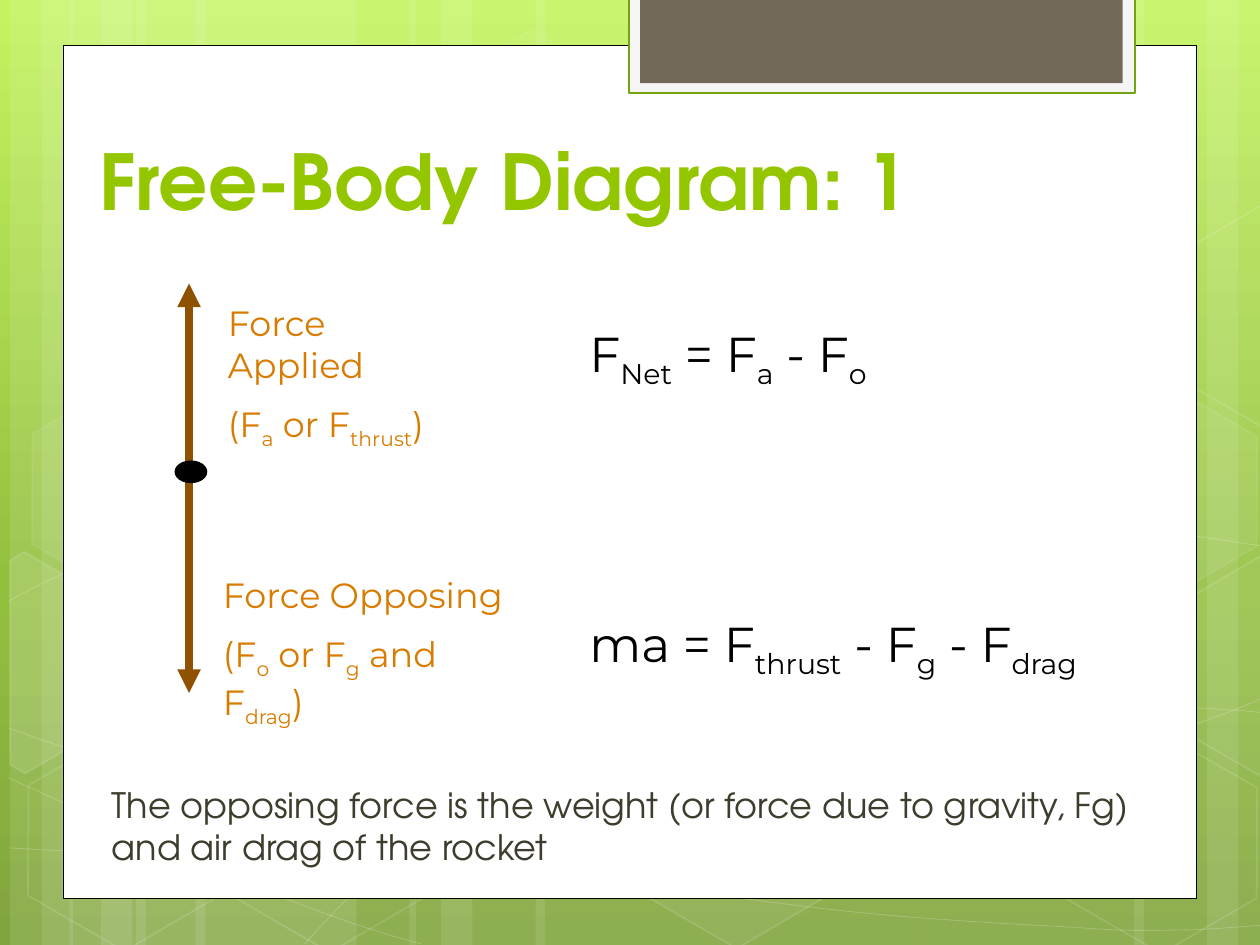
"""Build a slide with the free-body diagram of a rocket."""
from copy import deepcopy
from dataclasses import dataclass
from typing import Optional

from lxml.etree import SubElement
from pptx import Presentation
from pptx.dml.color import RGBColor
from pptx.enum.shapes import MSO_CONNECTOR, MSO_SHAPE
from pptx.enum.text import MSO_ANCHOR, PP_ALIGN
from pptx.oxml.ns import qn
from pptx.util import Cm, Pt

WHITE = RGBColor(0xFF, 0xFF, 0xFF)
BLACK = RGBColor(0x00, 0x00, 0x00)
LIME = RGBColor(0x94, 0xC6, 0x00)
FRAME_GREEN = RGBColor(0x74, 0xA5, 0x10)
TAB_GREY = RGBColor(0xF5, 0xF5, 0xF5)
TAB_BROWN = RGBColor(0x71, 0x68, 0x5A)
ARROW_BROWN = RGBColor(0x8F, 0x52, 0x01)
FORCE_ORANGE = RGBColor(0xD7, 0x7C, 0x01)
OLIVE = RGBColor(0x3E, 0x3D, 0x2D)
SKY = [
    (0, RGBColor(0xC3, 0xF3, 0x5F)),
    (0.62, RGBColor(0x93, 0xBF, 0x3F)),
    (1, RGBColor(0x81, 0xA5, 0x3E)),
]
BODY_FONT = "Montserrat"
HEAD_FONT = "TeX Gyre Adventor"


@dataclass
class Paint:
    fill: Optional[RGBColor] = None
    line: Optional[RGBColor] = None
    width: float = 1
    fill_alpha: int = 100
    line_alpha: int = 100


@dataclass
class Hexagon:
    left: float
    top: float
    fill_alpha: int
    line_alpha: int


@dataclass
class CutHexagon:
    points: list
    fill_alpha: int = 0


@dataclass
class Label:
    left: float
    top: float
    width: float
    height: float
    paragraphs: list
    size: int
    color: RGBColor
    font: str = BODY_FONT


STRIPES = [
    (1.08, 1.75), (0.08, 0.5), (0.33, 0.83), (1.55, 1.75), (0.55, 0.5), (0.8, 0.83),
    (7.33, 1.75), (9.58, 0.5), (9, 0.83), (4.25, 3.08), (3.25, 0.5), (3.5, 0.83),
]
CURVES = [
    [(0.07, 6.73), (0.61, 6.76), (1.15, 6.79), (1.9, 6.78), (2.65, 6.77), (3.58, 6.75),
     (4.58, 6.65), (5.58, 6.55), (7, 6.36), (7.92, 6.17), (8.83, 5.98), (9.77, 5.68),
     (10.07, 5.51)],
    [(0.07, 4.77), (0.36, 4.61), (0.65, 4.46), (1.21, 4.31), (1.78, 4.16), (2.59, 3.94),
     (3.47, 3.87), (4.36, 3.8), (5.44, 3.79), (6.54, 3.87), (7.64, 3.95), (9.47, 4.26),
     (10.07, 4.34)],
    [(0.06, 6.17), (1.27, 6.72), (2.47, 7.27), (3.34, 7.49)],
    [(0.07, 5.78), (0.38, 5.89), (0.7, 6), (1.28, 6.16), (1.86, 6.31), (2.73, 6.56),
     (3.57, 6.73), (4.4, 6.9), (5.45, 7.08), (6.28, 7.18), (7.11, 7.29), (8, 7.33),
     (8.53, 7.36), (9.05, 7.4), (9.19, 7.38), (9.45, 7.38), (9.71, 7.37), (9.89, 7.35),
     (10.07, 7.34)],
    [(2.42, 7.49), (2.6, 7.29), (2.78, 7.09), (3.02, 6.91), (3.26, 6.73), (3.6, 6.53),
     (3.88, 6.39), (4.16, 6.25), (4.33, 6.19), (4.7, 6.09), (5.06, 5.99), (5.73, 5.85),
     (6.08, 5.78), (6.44, 5.71), (6.49, 5.71), (6.8, 5.69), (7.11, 5.66), (7.6, 5.63),
     (7.94, 5.62), (8.29, 5.61), (8.86, 5.62), (9.53, 5.62), (9.71, 5.63), (9.88, 5.64),
     (10.06, 5.66)],
]
HEXAGONS = [
    Hexagon(3.34, 0.36, 4, 8), Hexagon(4.97, 5.89, 6, 12), Hexagon(0.11, 5.91, 0, 12),
    Hexagon(0.14, 3.12, 7, 8), Hexagon(1.74, 5.92, 0, 12), Hexagon(7.53, 4.53, 10, 12),
    Hexagon(8.34, 5.93, 0, 12), Hexagon(8.34, 3.14, 7, 8),
]
CUT_HEXAGONS = [
    CutHexagon([(0.08, 4.45), (0.19, 4.38), (0.96, 4.82), (0.95, 5.7), (0.2, 6.14), (0.08, 6.07)], 10),
    CutHexagon([(9.26, 4.85), (10.01, 4.41), (10.09, 4.46), (10.09, 6.13), (10.02, 6.17), (9.26, 5.73)], 4),
    CutHexagon([(9.26, 2.07), (10.01, 1.63), (10.1, 1.68), (10.09, 3.35), (10.02, 3.39), (9.26, 2.95)]),
]
LABELS = [
    Label(4.58, 2.52, 3.17, 0.57, ["F|Net| = F|a| - F|o"], 28, BLACK),
    Label(1.71, 2.34, 1.79, 1.62, ["Force Applied", "(F|a| or F|thrust|)"], 20, FORCE_ORANGE),
    Label(4.58, 4.82, 4.67, 0.57, ["ma = F|thrust| - F|g| - F|drag"], 28, BLACK),
    Label(1.67, 4.5, 2.5, 1.28, ["Force Opposing", "(F|o| or F|g| and F|drag|)"], 20, FORCE_ORANGE),
    Label(0.79, 6.17, 8.37, 0.77,
          ["The opposing force is the weight (or force due to gravity, Fg) and air drag of the rocket"],
          20, OLIVE, HEAD_FONT),
]


def inches(value: float) -> Cm:
    """Convert inches to a length in centimetres."""
    return Cm(value * 2.54)


def set_color(fill, color: Optional[RGBColor], alpha: int) -> None:
    """Fill with a colour of the given opacity, or with nothing."""
    if color is None or alpha == 0:
        fill.background()
        return
    fill.solid()
    fill.fore_color.rgb = color
    if alpha < 100:
        tint = fill._xPr.find(".//" + qn("a:srgbClr"))
        SubElement(tint, qn("a:alpha"), val=str(alpha * 1000))


def apply_paint(shape, paint: Paint) -> None:
    """Give a shape its fill and line."""
    shape.shadow.inherit = False
    set_color(shape.fill, paint.fill, paint.fill_alpha)
    set_color(shape.line.fill, paint.line, paint.line_alpha)
    if paint.line is not None:
        shape.line.width = Pt(paint.width)


def draw_shape(slide, kind, left: float, top: float, width: float, height: float, paint: Paint):
    """Draw a preset shape."""
    shape = slide.shapes.add_shape(kind, *map(inches, (left, top, width, height)))
    apply_paint(shape, paint)
    return shape


def draw_outline(slide, points: list, paint: Paint, close: bool):
    """Draw a freeform through the points."""
    corners = [(inches(x), inches(y)) for x, y in points]
    builder = slide.shapes.build_freeform(*corners[0])
    builder.add_line_segments(corners[1:], close=close)
    outline = builder.convert_to_shape()
    apply_paint(outline, paint)
    return outline


def draw_curve(slide, knots: list) -> None:
    """Draw a chain of cubic curves, three points to each."""
    curve = draw_outline(slide, knots, Paint(line=WHITE, width=0.5, line_alpha=20), False)
    track = curve._element.find(".//" + qn("a:path"))
    segments = track.findall(qn("a:lnTo"))
    for start in range(0, len(segments), 3):
        cubic = SubElement(track, qn("a:cubicBezTo"))
        for segment in segments[start:start + 3]:
            cubic.append(segment[0])
            track.remove(segment)


def draw_force(slide, x: float, start: float, end: float) -> None:
    """Draw a vertical force arrow."""
    force = slide.shapes.add_connector(MSO_CONNECTOR.STRAIGHT, *map(inches, (x, start, x, end)))
    force.line.color.rgb = ARROW_BROWN
    force.line.width = Pt(4.5)
    SubElement(force.line._get_or_add_ln(), qn("a:tailEnd"), type="triangle")
    SubElement(force._element.spPr, qn("a:effectLst"))


def draw_label(slide, label: Label) -> None:
    """Draw a text box whose every second part is a subscript."""
    box = slide.shapes.add_textbox(*map(inches, (label.left, label.top, label.width, label.height)))
    frame = box.text_frame
    frame.word_wrap = True
    for index, wording in enumerate(label.paragraphs):
        paragraph = frame.add_paragraph() if index else frame.paragraphs[0]
        paragraph.space_before = Pt(label.size / 2)
        for position, part in enumerate(wording.split("|")):
            run = paragraph.add_run()
            run.text = part
            run.font.size = Pt(label.size)
            run.font.name = label.font
            run.font.color.rgb = label.color
            if position % 2:
                run._r.get_or_add_rPr().set("baseline", "-25000")


def draw_background(slide) -> None:
    """Draw the gradient, stripes, curves, hexagons and white panel."""
    fill = slide.background.fill
    fill.gradient()
    fill.gradient_angle = 270
    stop_list = slide._element.find(".//" + qn("a:gsLst"))
    stop_list.append(deepcopy(stop_list[-1]))
    for stop, (position, color) in zip(fill.gradient_stops, SKY):
        stop.position = position
        stop.color.rgb = color
    for left, width in STRIPES:
        draw_shape(slide, MSO_SHAPE.RECTANGLE, left, 0, width, 7.5, Paint(WHITE, fill_alpha=10))
    for knots in CURVES:
        draw_curve(slide, knots)
    for cell in HEXAGONS:
        paint = Paint(WHITE, WHITE, 1, cell.fill_alpha, cell.line_alpha)
        hexagon = draw_shape(slide, MSO_SHAPE.HEXAGON, cell.left, cell.top, 1.75, 1.52, paint)
        hexagon.adjustments[0] = 0.285
        hexagon.rotation = 30
    for cell in CUT_HEXAGONS:
        draw_outline(slide, cell.points, Paint(WHITE, WHITE, 1, cell.fill_alpha, 12), True)
    draw_shape(slide, MSO_SHAPE.RECTANGLE, 0.5, 0.36, 9, 6.77, Paint(WHITE, BLACK, 0.5))
    draw_shape(slide, MSO_SHAPE.RECTANGLE, 4.99, -0.02, 4.02, 0.76, Paint(TAB_GREY, FRAME_GREEN, 1.25))
    draw_shape(slide, MSO_SHAPE.RECTANGLE, 5.08, -0.02, 3.83, 0.68, Paint(TAB_BROWN))


def place_title(slide) -> None:
    """Set the title in front of the panel."""
    title = slide.shapes.title
    title.left, title.top, title.width, title.height = map(inches, (0.56, 0.76, 8.35, 1.08))
    frame = title.text_frame
    frame.text = "Free-Body Diagram: 1"
    frame.vertical_anchor = MSO_ANCHOR.BOTTOM
    frame.margin_left = inches(0.23)
    frame.paragraphs[0].alignment = PP_ALIGN.LEFT
    font = frame.paragraphs[0].runs[0].font
    font.name, font.size, font.bold = HEAD_FONT, Pt(44), True
    font.color.rgb = LIME
    slide.shapes._spTree.append(title._element)


def main() -> None:
    """Build and save the slide."""
    deck = Presentation()
    deck.slide_width, deck.slide_height = Cm(25.4), Cm(19.05)
    slide = deck.slides.add_slide(deck.slide_layouts[5])
    draw_background(slide)
    draw_force(slide, 1.5, 3.67, 5.5)
    draw_force(slide, 1.5, 3.75, 2.25)
    for label in LABELS:
        draw_label(slide, label)
    draw_shape(slide, MSO_SHAPE.OVAL, 1.39, 3.66, 0.25, 0.17, Paint(BLACK, BLACK, 0.75))
    place_title(slide)
    deck.save("out.pptx")


if __name__ == "__main__":
    main()
